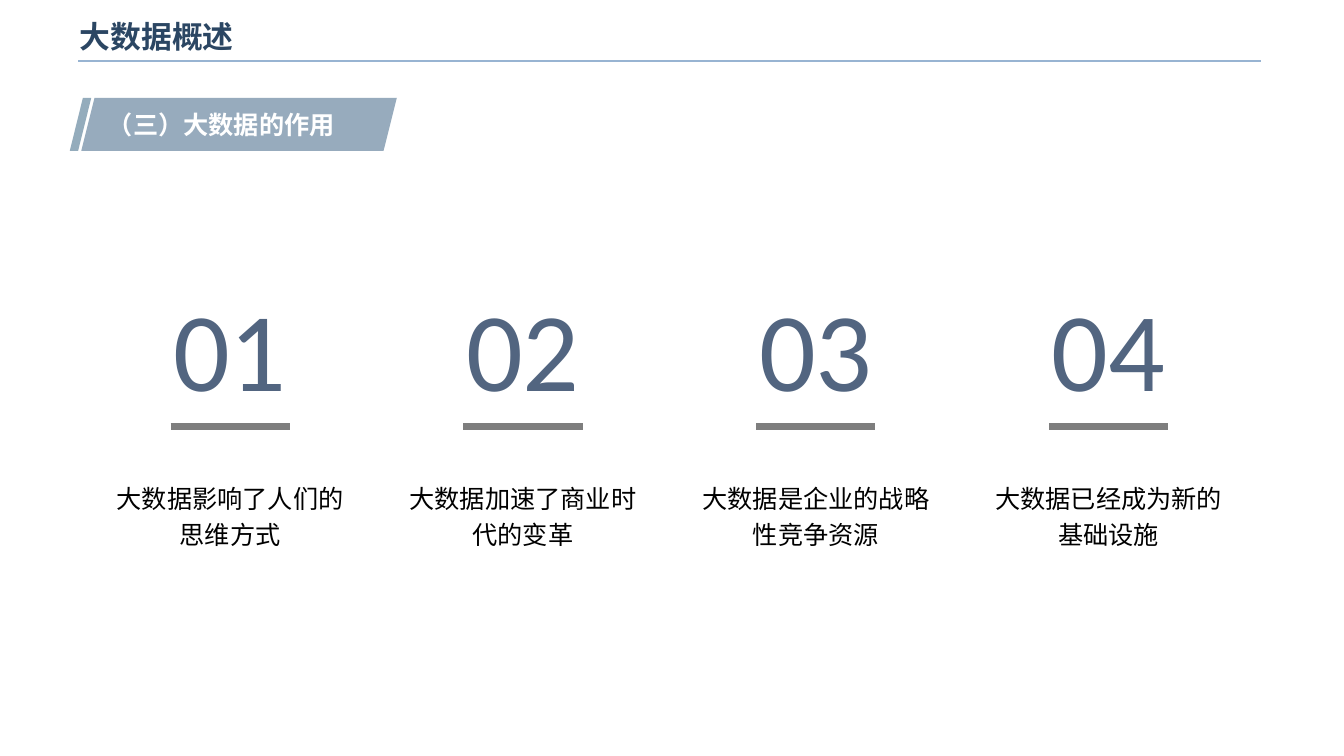
from lxml.etree import SubElement
from pptx import Presentation
from pptx.dml.color import RGBColor
from pptx.enum.shapes import MSO_CONNECTOR, MSO_SHAPE
from pptx.enum.text import MSO_ANCHOR, PP_ALIGN
from pptx.oxml.ns import qn
from pptx.util import Cm, Pt

TITLE = "大数据概述"
SECTION = "（三）大数据的作用"
ROLES = [
    ("01", "大数据影响了人们的思维方式"),
    ("02", "大数据加速了商业时代的变革"),
    ("03", "大数据是企业的战略性竞争资源"),
    ("04", "大数据已经成为新的基础设施"),
]

NAVY = RGBColor(0x2B, 0x46, 0x63)
SKY = RGBColor(0x98, 0xB4, 0xD2)
STRIPE = RGBColor(0x94, 0xAC, 0xBC)
BANNER = RGBColor(0x97, 0xAB, 0xBD)
SLATE = RGBColor(0x52, 0x65, 0x80)
GREY = RGBColor(0x7E, 0x7E, 0x7E)
WHITE = RGBColor(0xFF, 0xFF, 0xFF)
BLACK = RGBColor(0, 0, 0)
HAN = "Noto Sans CJK SC"

# Column layout in cm
FIRST, STEP = 5.8, 7.38
NUM_W, RULE_W, TEXT_W = 3.66, 3.0, 6.55


def write(frame, text, size, color, face=HAN, bold=False, align=PP_ALIGN.LEFT):
    par = frame.paragraphs[0]
    par.alignment = align
    run = par.add_run()
    run.text = text
    font = run.font
    font.size, font.bold, font.name = Pt(size), bold, face
    font.color.rgb = color
    SubElement(font._element, qn("a:ea")).set("typeface", HAN)
    return par


def add_box(slide, x, y, w, h, wrap=True):
    frame = slide.shapes.add_textbox(Cm(x), Cm(y), Cm(w), Cm(h)).text_frame
    frame.word_wrap = wrap
    return frame


def add_rule(slide, x, y, w, color, width):
    rule = slide.shapes.add_connector(
        MSO_CONNECTOR.STRAIGHT, Cm(x), Cm(y), Cm(x + w), Cm(y))
    rule.line.color.rgb = color
    rule.line.width = Pt(width)
    SubElement(rule._element.spPr, qn("a:effectLst"))


def add_slant(slide, x, w, slope, color):
    slant = slide.shapes.add_shape(
        MSO_SHAPE.PARALLELOGRAM, Cm(x), Cm(2.47), Cm(w), Cm(1.33))
    slant.adjustments[0] = slope
    slant.shadow.inherit = False
    slant.fill.solid()
    slant.fill.fore_color.rgb = color
    slant.line.fill.background()


def add_head(slide):
    add_rule(slide, 1.97, 1.54, 29.8, SKY, 1)
    title = slide.shapes.title
    title.left, title.top = Cm(1.76), Cm(0.24)
    title.width, title.height = Cm(27.2), Cm(1.34)
    title.text_frame.vertical_anchor = MSO_ANCHOR.MIDDLE
    write(title.text_frame, TITLE, 22, NAVY, "Arial", True)

    add_slant(slide, 1.76, 0.54, 0.61, STRIPE)
    add_slant(slide, 2.05, 7.95, 0.25, BANNER)
    write(add_box(slide, 2.47, 2.62, 7.06, 1.02), SECTION, 18, WHITE, bold=True)


def add_role(slide, mid, num, text):
    frame = add_box(slide, mid - NUM_W / 2, 6.91, NUM_W, 3.68, wrap=False)
    write(frame, num, 80, SLATE, "Calibri", align=PP_ALIGN.CENTER)
    add_rule(slide, mid - RULE_W / 2, 10.74, RULE_W, GREY, 5)
    frame = add_box(slide, mid - TEXT_W / 2, 11.89, TEXT_W, 2.11)
    par = write(frame, text, 18, BLACK, align=PP_ALIGN.CENTER)
    par.line_spacing = 1.2
    par.space_after = Pt(15)


def main():
    deck = Presentation()
    deck.slide_width, deck.slide_height = Cm(33.87), Cm(19.05)
    slide = deck.slides.add_slide(deck.slide_layouts[5])
    add_head(slide)
    for i, (num, text) in enumerate(ROLES):
        add_role(slide, FIRST + i * STEP, num, text)
    deck.save("out.pptx")


if __name__ == "__main__":
    main()
